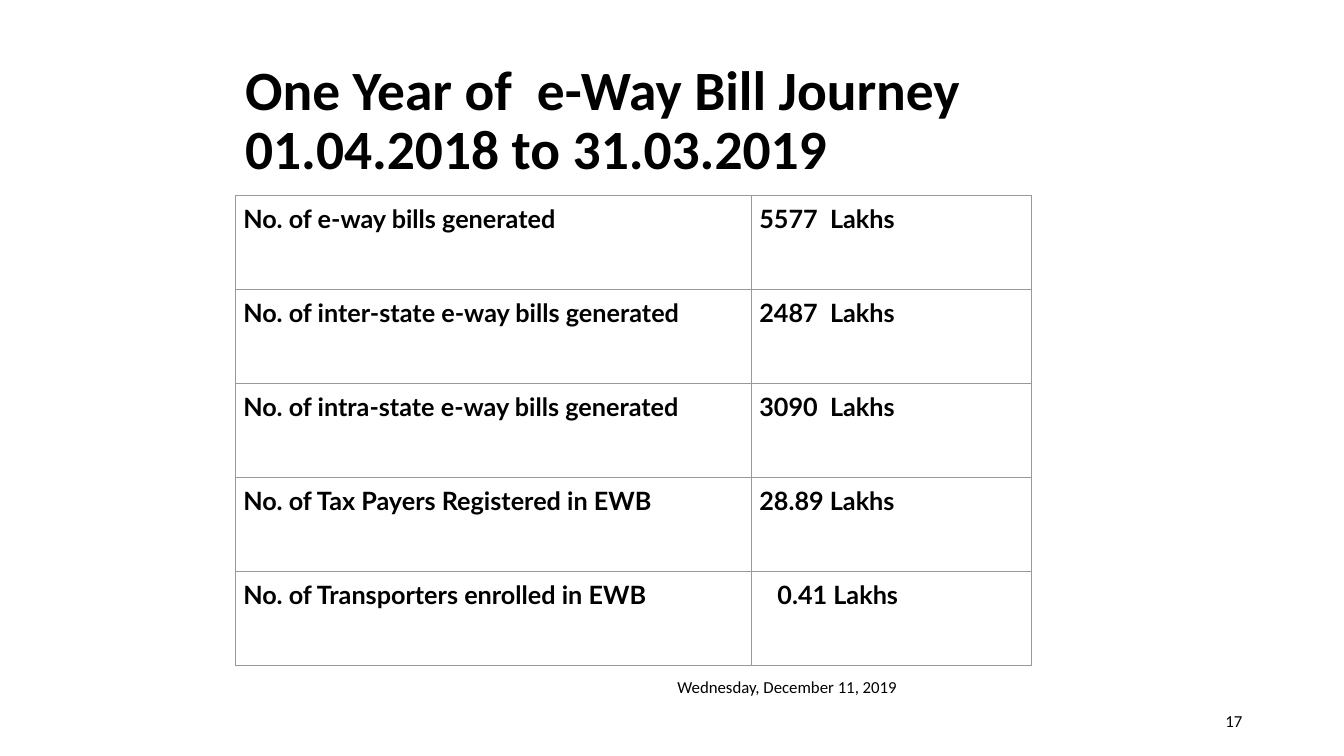
from dataclasses import dataclass

from lxml import etree
from pptx import Presentation
from pptx.dml.color import RGBColor
from pptx.enum.text import MSO_ANCHOR, PP_ALIGN
from pptx.oxml.ns import qn
from pptx.util import Inches, Pt

LEFT, RIGHT = PP_ALIGN.LEFT, PP_ALIGN.RIGHT
MIDDLE = MSO_ANCHOR.MIDDLE
EDGES = ("a:lnL", "a:lnR", "a:lnT", "a:lnB")


@dataclass(frozen=True)
class Theme:
    ink: str = "000000"
    paper: str = "FFFFFF"
    rule: str = "999999"
    rule_width: float = 0.75
    head: tuple = ("Calibri", 39.6, True)
    body: tuple = ("Lato", 18, True)
    foot: tuple = ("Calibri", 12, False)


def assign(target, values):
    for name, value in values.items():
        setattr(target, name, value)


class Page:
    """Places elements on one slide; lengths are percentages of its size."""

    def __init__(self, deck, theme):
        self.deck, self.theme = deck, theme
        self.slide = deck.slides.add_slide(deck.slide_layouts[6])

    def across(self, share):
        return round(self.deck.slide_width * share / 100)

    def down(self, share):
        return round(self.deck.slide_height * share / 100)

    def box(self, area):
        x, y, w, h = area
        return self.across(x), self.down(y), self.across(w), self.down(h)

    def letter(self, frame, lines, style, **form):
        """Fill one paragraph, with a line break between lines."""
        para = frame.paragraphs[0]
        assign(para, form)
        for i, line in enumerate(lines):
            if i:
                para.add_line_break()
            run = para.add_run()
            run.text = line
            face, size, bold = style
            assign(run.font, {"name": face, "size": Pt(size), "bold": bold})
            run.font.color.rgb = RGBColor.from_string(self.theme.ink)

    def text(self, area, lines, style, **form):
        frame = self.slide.shapes.add_textbox(*self.box(area)).text_frame
        assign(frame, {"word_wrap": True, "vertical_anchor": MIDDLE})
        self.letter(frame, lines, style, **form)

    def border(self, cell):
        props = cell._tc.get_or_add_tcPr()
        for i, edge in enumerate(EDGES):
            line = etree.Element(qn(edge), w=str(Pt(self.theme.rule_width)))
            fill = etree.SubElement(line, qn("a:solidFill"))
            etree.SubElement(fill, qn("a:srgbClr"), val=self.theme.rule)
            props.insert(i, line)

    def table(self, area, widths, rows, pad, indents):
        """Draw a ruled table; indents maps (row, column) to extra left space."""
        shape = self.slide.shapes.add_table(len(rows), len(widths), *self.box(area))
        table = shape.table
        assign(table, {"first_row": False, "horz_banding": False})
        for col, width in zip(table.columns, widths):
            col.width = self.across(width)
        sides = ("left", "right", "top", "bottom")
        for r, row in enumerate(rows):
            for c, value in enumerate(row):
                cell = table.cell(r, c)
                assign(cell, {f"margin_{side}": Inches(pad) for side in sides})
                cell.margin_left += Inches(indents.get((r, c), 0))
                cell.fill.solid()
                cell.fill.fore_color.rgb = RGBColor.from_string(self.theme.paper)
                self.border(cell)
                self.letter(cell.text_frame, [value], self.theme.body)


TITLE = ["One Year of  e-Way Bill Journey", "01.04.2018 to 31.03.2019"]
FACTS = [
    ("No. of e-way bills generated", "5577  Lakhs"),
    ("No. of inter-state e-way bills generated", "2487  Lakhs"),
    ("No. of intra-state e-way bills generated", "3090  Lakhs"),
    ("No. of Tax Payers Registered in EWB", "28.89 Lakhs"),
    ("No. of Transporters enrolled in EWB", "0.41 Lakhs"),
]


def main():
    deck = Presentation()
    assign(deck, {"slide_width": Inches(13.33), "slide_height": Inches(7.5)})
    theme = Theme()
    page = Page(deck, theme)
    page.text((17.5, 8.93, 55.3, 14.4), TITLE, theme.head,
              alignment=LEFT, line_spacing=0.9)
    page.text((49.66, 88.13, 19.95, 5.33), ["Wednesday, December 11, 2019"],
              theme.foot, alignment=LEFT)
    page.text((70.67, 92.67, 22.5, 5.33), ["17"], theme.foot, alignment=RIGHT)
    page.table((17.5, 25.87, 59.26, 62.2), (38.4, 20.86), FACTS,
               pad=0.08, indents={(4, 1): 0.18})
    deck.save("out.pptx")


if __name__ == "__main__":
    main()
